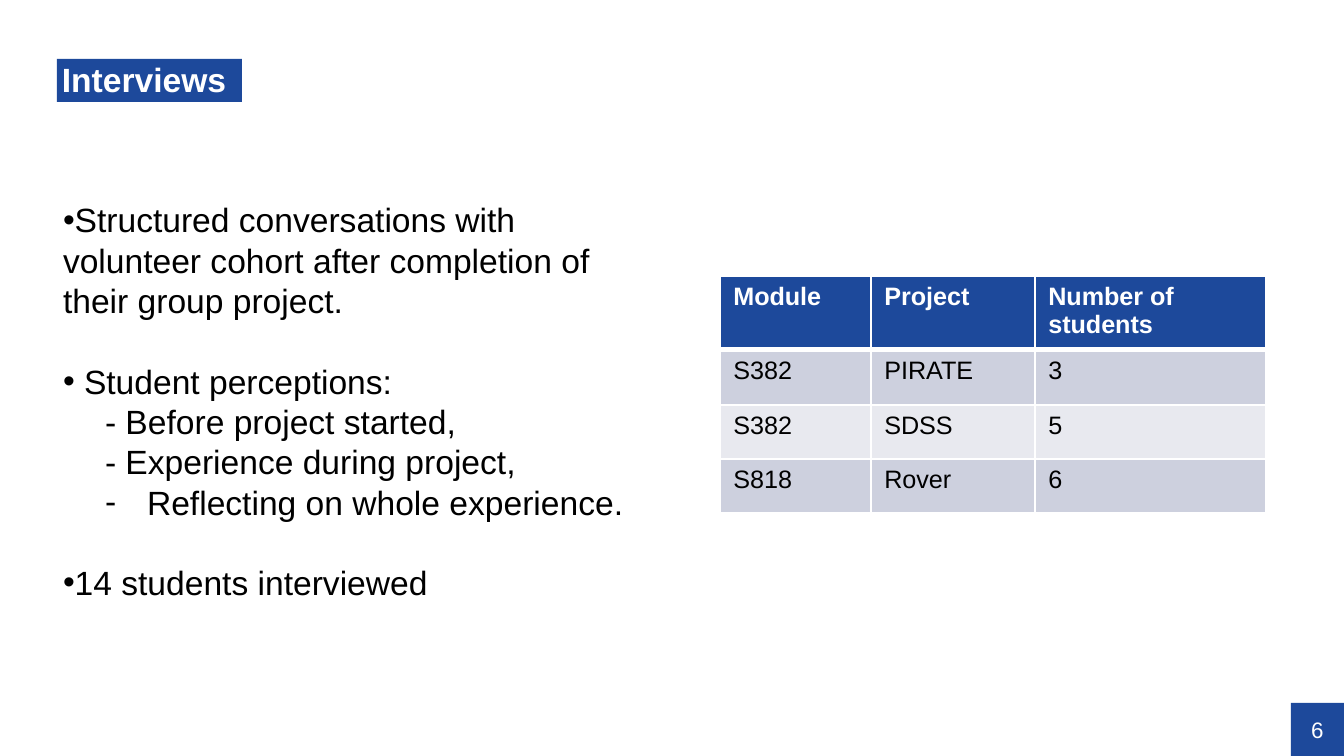
import pptx
import pptx.dml.color
import pptx.enum.shapes
import pptx.enum.text
import pptx.util
from lxml import etree
from pptx.oxml.ns import qn

PX = 914400 / 134.4
BLUE = pptx.dml.color.RGBColor(0x1D, 0x49, 0x9B)
WHITE = pptx.dml.color.RGBColor(0xFF, 0xFF, 0xFF)
BLACK = pptx.dml.color.RGBColor(0x00, 0x00, 0x00)
BAND_DARK = pptx.dml.color.RGBColor(0xCD, 0xD0, 0xDE)
BAND_LIGHT = pptx.dml.color.RGBColor(0xE8, 0xE9, 0xEF)


def px(*lengths):
    """Turn px into EMU."""
    return [pptx.util.Emu(round(length * PX)) for length in lengths]


def set_font(paragraph, size, color, bold=False):
    paragraph.font.name = "Arial"
    paragraph.font.size = pptx.util.Pt(size)
    paragraph.font.color.rgb = color
    paragraph.font.bold = bold


deck = pptx.Presentation()
deck.slide_width, deck.slide_height = px(1344, 756)
slide = deck.slides.add_slide(deck.slide_layouts[6])

# Title and page number: text, box, insets, size, bold, alignment
labels = [
    ("6", (1291, 703, 53, 53), (0, 0), 12, False, pptx.enum.text.PP_ALIGN.CENTER),
    ("Interviews", (57, 59, 185, 43), (5, 3), 18, True, pptx.enum.text.PP_ALIGN.LEFT),
]
for text, box, insets, size, bold, alignment in labels:
    label = slide.shapes.add_shape(pptx.enum.shapes.MSO_SHAPE.RECTANGLE, *px(*box))
    label.shadow.inherit = False
    label.fill.solid()
    label.fill.fore_color.rgb = BLUE
    label.line.fill.background()
    frame = label.text_frame
    frame.margin_left, frame.margin_top = px(*insets)
    frame.margin_right = frame.margin_bottom = 0
    frame.vertical_anchor = pptx.enum.text.MSO_ANCHOR.MIDDLE
    paragraph = frame.paragraphs[0]
    paragraph.text = text
    paragraph.alignment = alignment
    paragraph.line_spacing = 0.9 if bold else 1.0
    set_font(paragraph, size, WHITE, bold)

# Findings: text, level, left margin, first-line indent, bullet, line gap before
LINE = pptx.util.Pt(21.6)
findings = [
    ("Structured conversations with volunteer cohort after completion of "
     "their group project.", 0, 0, -26, "•", False),
    (" Student perceptions:", 0, 0, -26, "•", True),
    ("- Before project started,", 2, 42, 0, None, False),
    ("- Experience during project,", 2, 42, 0, None, False),
    ("Reflecting on whole experience.", 2, 84, -42, "-", False),
    ("14 students interviewed", 0, 0, -26, "•", True),
]
body = slide.shapes.add_textbox(*px(63, 159, 562, 544)).text_frame
body.word_wrap = True
body.margin_left = body.margin_right = body.margin_bottom = 0
body.margin_top = LINE
for index, (text, level, margin, indent, bullet, gap) in enumerate(findings):
    paragraph = body.add_paragraph() if index else body.paragraphs[0]
    paragraph.text = text
    paragraph.level = level
    properties = paragraph._p.get_or_add_pPr()
    properties.set("marL", str(px(margin)[0]))
    properties.set("indent", str(px(indent)[0]))
    if bullet:
        etree.SubElement(properties, qn("a:buFont"), typeface="Arial")
        etree.SubElement(properties, qn("a:buChar"), char=bullet)
    else:
        etree.SubElement(properties, qn("a:buNone"))
    paragraph.line_spacing = LINE
    if gap:
        paragraph.space_before = LINE
    set_font(paragraph, 18, BLACK)

# Interviewed students per project
rows = [
    ("Module", "Project", "Number of students"),
    ("S382", "PIRATE", "3"),
    ("S382", "SDSS", "5"),
    ("S818", "Rover", "6"),
]
widths = (151, 164, 231)
heights = (68, 55, 54, 54)
interviews = slide.shapes.add_table(
    len(rows), len(widths), *px(720, 276, sum(widths), sum(heights))).table
for column, width in zip(interviews.columns, px(*widths)):
    column.width = width
for row, height in zip(interviews.rows, px(*heights)):
    row.height = height

for r, row in enumerate(rows):
    for c, text in enumerate(row):
        cell = interviews.cell(r, c)
        borders = {"a:lnL": 1, "a:lnR": 1, "a:lnT": 3 if r == 1 else 1, "a:lnB": 3 if r == 0 else 1}
        for side, points in borders.items():
            border = etree.SubElement(
                cell._tc.get_or_add_tcPr(), qn(side), w=str(pptx.util.Pt(points)))
            fill = etree.SubElement(border, qn("a:solidFill"))
            etree.SubElement(fill, qn("a:srgbClr"), val=str(WHITE))
        cell.fill.solid()
        cell.fill.fore_color.rgb = BLUE if r == 0 else BAND_DARK if r % 2 else BAND_LIGHT
        cell.text = text
        set_font(cell.text_frame.paragraphs[0], 13.5, BLACK if r else WHITE, r == 0)

deck.save("out.pptx")
